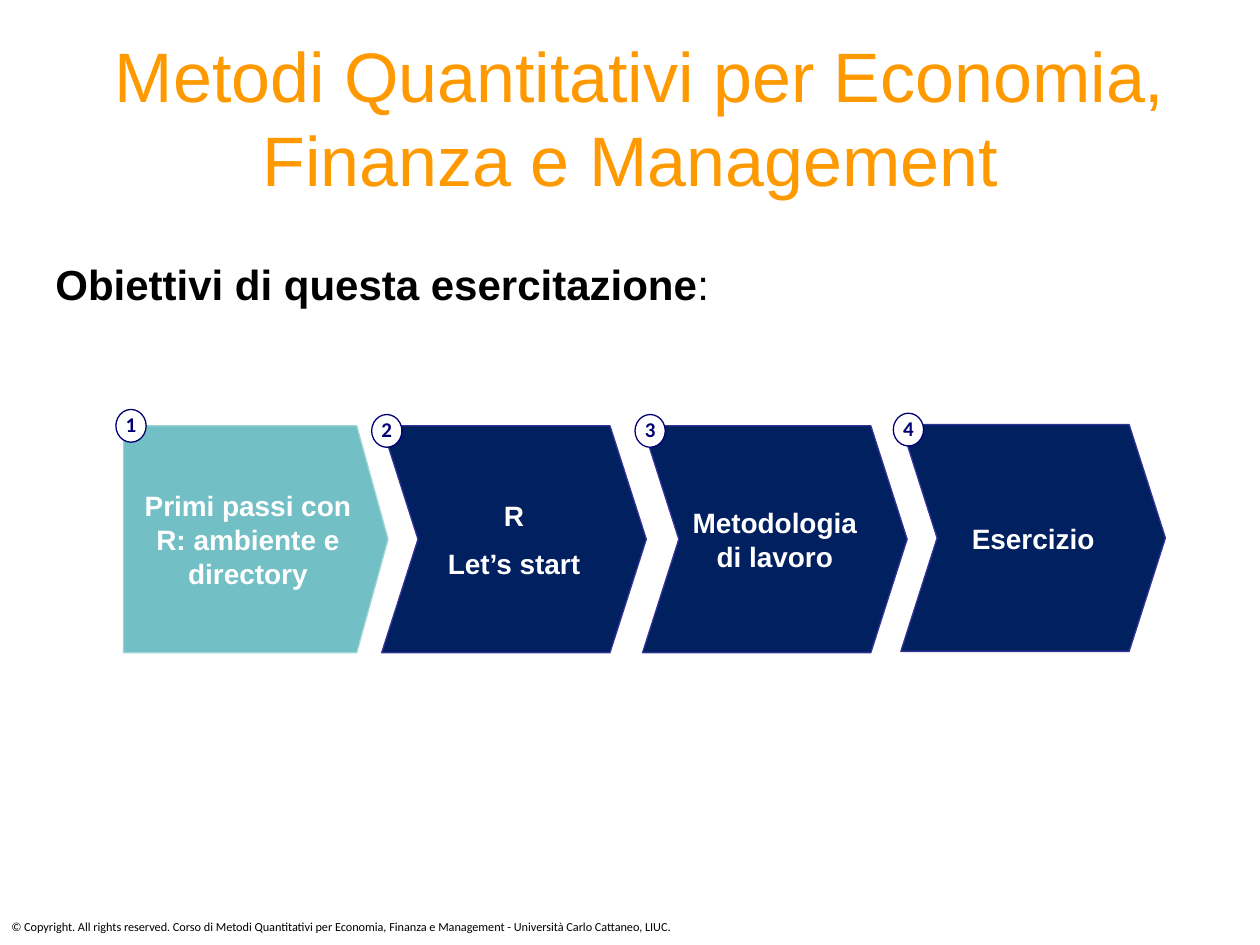
from dataclasses import dataclass

from pptx import Presentation
from pptx.dml.color import RGBColor
from pptx.enum.shapes import MSO_SHAPE
from pptx.enum.text import MSO_ANCHOR, PP_ALIGN
from pptx.util import Inches, Pt

CHEVRON, PLATE, OVAL = MSO_SHAPE.CHEVRON, MSO_SHAPE.PENTAGON, MSO_SHAPE.OVAL
LEFT, CENTER = PP_ALIGN.LEFT, PP_ALIGN.CENTER
TOP, MIDDLE = MSO_ANCHOR.TOP, MSO_ANCHOR.MIDDLE


@dataclass(frozen=True)
class Theme:
    orange: str = "FF9900"
    black: str = "000000"
    white: str = "FFFFFF"
    navy: str = "002060"
    edge: str = "333399"
    teal: str = "72BFC5"
    rim: str = "9ED3D7"
    badge: str = "000074"
    head: int = 40
    lead: int = 24
    step: int = 16
    number: int = 12
    foot: int = 7
    sans: str = "Arial"
    small: str = "Calibri"


theme = Theme()


def write(shape, text, size, color, font=theme.sans, bold=False, tail="",
          align=LEFT, anchor=TOP, inset=(0.1, 0.05), gap=0, wrap=True):
    """Fill a shape with one paragraph per line; tail is a last, plain run."""
    frame = shape.text_frame
    frame.word_wrap = wrap
    frame.vertical_anchor = anchor
    frame.margin_left = frame.margin_right = Inches(inset[0])
    frame.margin_top = frame.margin_bottom = Inches(inset[1])
    for i, line in enumerate(text.split("\n")):
        para = frame.add_paragraph() if i else frame.paragraphs[0]
        para.alignment = align
        if i:
            para.space_before = Pt(gap)
        para.font.size = Pt(size)
        para.font.name = font
        para.font.color.rgb = RGBColor.from_string(color)
        run = para.add_run()
        run.text = line
        run.font.bold = bold
    if tail:
        para.add_run().text = tail
    for para in frame.paragraphs:
        for run in para.runs:
            run.font.size = Pt(size)
            run.font.name = font
            run.font.color.rgb = RGBColor.from_string(color)


def draw(kind, left, top, width, height, fill, line):
    """Add a flat preset shape with a thin outline."""
    shape = slide.shapes.add_shape(
        kind, Inches(left), Inches(top), Inches(width), Inches(height))
    shape.shadow.inherit = False
    shape.fill.solid()
    shape.fill.fore_color.rgb = RGBColor.from_string(fill)
    shape.line.color.rgb = RGBColor.from_string(line)
    shape.line.width = Pt(0.75)
    return shape


deck = Presentation()
deck.slide_width, deck.slide_height = Inches(10), Inches(7.5)
slide = deck.slides.add_slide(deck.slide_layouts[6])

# Title
box = slide.shapes.add_textbox(Inches(0.5), Inches(0.3), Inches(9), Inches(1.25))
write(box, " Metodi Quantitativi per Economia, Finanza e Management",
      theme.head, theme.orange, align=CENTER, anchor=MIDDLE)

# Lead line
box = slide.shapes.add_textbox(Inches(0.25), Inches(2), Inches(9.5), Inches(3.53))
write(box, "Obiettivi di questa esercitazione", theme.lead, theme.black,
      bold=True, tail=":", inset=(0.19, 0.05))

# Steps: text, left and top of the arrow, left and top of its badge
steps = [
    ("Primi passi con R: ambiente e directory", 0.98, 3.38, 0.92, 3.25),
    ("R\nLet’s start", 3.03, 3.38, 2.95, 3.29),
    ("Metodologia di lavoro", 5.1, 3.38, 5.04, 3.29),
    ("Esercizio", 7.15, 3.37, 7.09, 3.28),
]
for num, (text, left, top, x, y) in enumerate(steps, 1):
    if num == 1:
        kind, tip, fill, line = PLATE, 0.138, theme.teal, theme.rim
    else:
        kind, tip, fill, line = CHEVRON, 0.16, theme.navy, theme.edge
    arrow = draw(kind, left, top, 2.1, 1.8, fill, line)
    arrow.adjustments[0] = tip
    write(arrow, text, theme.step, theme.white, bold=True, align=CENTER,
          anchor=MIDDLE, inset=(0.08, 0.04), gap=8)
    badge = draw(OVAL, x, y, 0.24, 0.26, theme.white, theme.badge)
    write(badge, str(num), theme.number, theme.badge, font=theme.small,
          bold=True, align=CENTER, anchor=MIDDLE, inset=(0, 0), wrap=False)
    badge.text_frame.paragraphs[0].line_spacing = 0.9

# Footer
box = slide.shapes.add_textbox(Inches(0), Inches(7.25), Inches(9.92), Inches(0.22))
write(box, "© Copyright. All rights reserved. Corso di Metodi Quantitativi per "
      "Economia, Finanza e Management - Università Carlo Cattaneo, LIUC.",
      theme.foot, theme.black, font=theme.small, inset=(0.09, 0.05))

deck.save("out.pptx")
